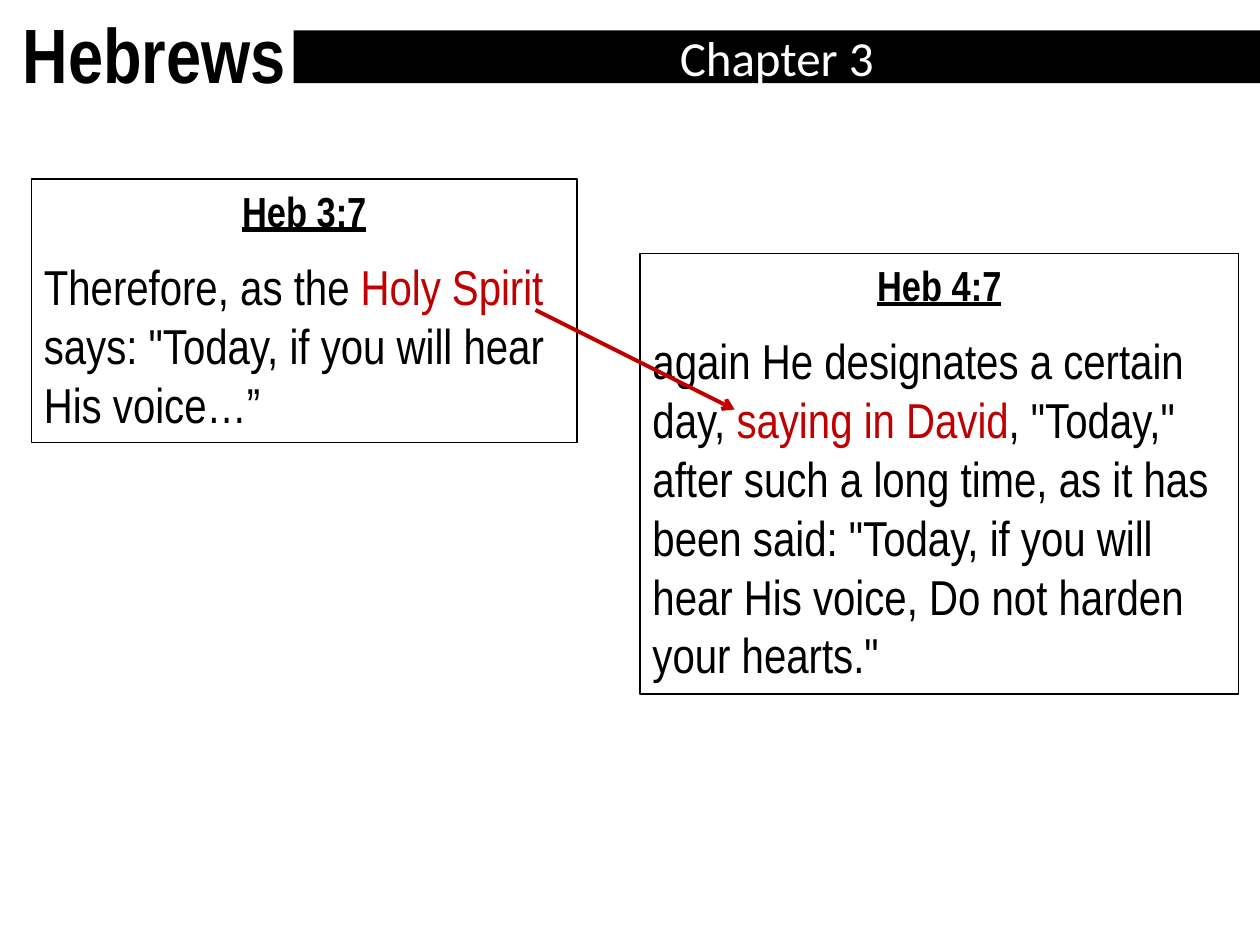
from lxml.etree import SubElement
from pptx import Presentation
from pptx.dml.color import RGBColor
from pptx.enum.shapes import MSO_CONNECTOR, MSO_SHAPE
from pptx.enum.text import MSO_ANCHOR, MSO_AUTO_SIZE, PP_ALIGN
from pptx.oxml.ns import qn
from pptx.util import Inches, Pt

COLORS = {name: RGBColor.from_string(value) for name, value in {
    "black": "000000", "white": "FFFFFF", "red": "C00000"}.items()}
NARROW = "Arial Narrow"


def add_run(paragraph, text, color="black", **formats):
    run = paragraph.add_run()
    run.text = text
    run.font.color.rgb = COLORS[color]
    for name, value in formats.items():
        setattr(run.font, name, value)


def add_rectangle(left, top, width, height, fill):
    shape = slide.shapes.add_shape(
        MSO_SHAPE.RECTANGLE, Inches(left), Inches(top), Inches(width), Inches(height))
    shape.shadow.inherit = False
    shape.fill.solid()
    shape.fill.fore_color.rgb = COLORS[fill]
    shape.text_frame.word_wrap = True
    return shape


presentation = Presentation()
presentation.slide_width, presentation.slide_height = Inches(10), Inches(7.5)
slide = presentation.slides.add_slide(presentation.slide_layouts[5])

# Heading and chapter bar
title = slide.shapes.title
title.left, title.top, title.width, title.height = (
    Inches(value) for value in (0.08, 0, 9.93, 0.84))
title.text_frame.vertical_anchor = MSO_ANCHOR.TOP
title.text_frame.auto_size = MSO_AUTO_SIZE.NONE
title_paragraph = title.text_frame.paragraphs[0]
title_paragraph.alignment = PP_ALIGN.LEFT
add_run(title_paragraph, "Hebrews", name=NARROW, size=Pt(44), bold=True)

chapter_bar = add_rectangle(2.33, 0.24, 7.67, 0.42, "black")
chapter_bar.line.fill.background()
chapter_bar.text_frame.vertical_anchor = MSO_ANCHOR.MIDDLE
chapter_paragraph = chapter_bar.text_frame.paragraphs[0]
chapter_paragraph.alignment = PP_ALIGN.CENTER
add_run(chapter_paragraph, "Chapter 3", "white", name="Calibri", size=Pt(28))

# Verse boxes: position, reference, text pieces with their colours
verses = [
    ((0.25, 1.42, 4.33, 2.09), "Heb 3:7", [
        ("Therefore, as the ", "black"),
        ("Holy Spirit ", "red"),
        ('says: "Today, if you will hear His voice…”', "black")]),
    ((5.08, 2.01, 4.75, 3.5), "Heb 4:7", [
        ("again He designates a certain day, ", "black"),
        ("saying in David", "red"),
        (', "Today," after such a long time, as it has been said: '
         '"Today, if you will hear His voice, Do not harden your hearts."', "black")]),
]
for position, reference, pieces in verses:
    verse_box = add_rectangle(*position, "white")
    verse_box.line.color.rgb = COLORS["black"]
    verse_box.line.width = Pt(0.75)
    frame = verse_box.text_frame
    frame.vertical_anchor = MSO_ANCHOR.TOP
    frame.auto_size = MSO_AUTO_SIZE.SHAPE_TO_FIT_TEXT
    heading = frame.paragraphs[0]
    heading.alignment = PP_ALIGN.CENTER
    add_run(heading, reference, name=NARROW, size=Pt(24), bold=True, underline=True)
    body = frame.add_paragraph()
    body.alignment = PP_ALIGN.LEFT
    body.space_before = Pt(12)
    for text, color in pieces:
        add_run(body, text, color, name=NARROW, size=Pt(28))

# Arrow linking the two red phrases
arrow = slide.shapes.add_connector(
    MSO_CONNECTOR.STRAIGHT, Inches(4.25), Inches(2.46), Inches(5.83), Inches(3.25))
arrow.line.color.rgb = COLORS["red"]
arrow.line.width = Pt(2.25)
SubElement(arrow.line._get_or_add_ln(), qn("a:tailEnd"), type="arrow")
SubElement(arrow._element.spPr, qn("a:effectLst"))

presentation.save("out.pptx")
